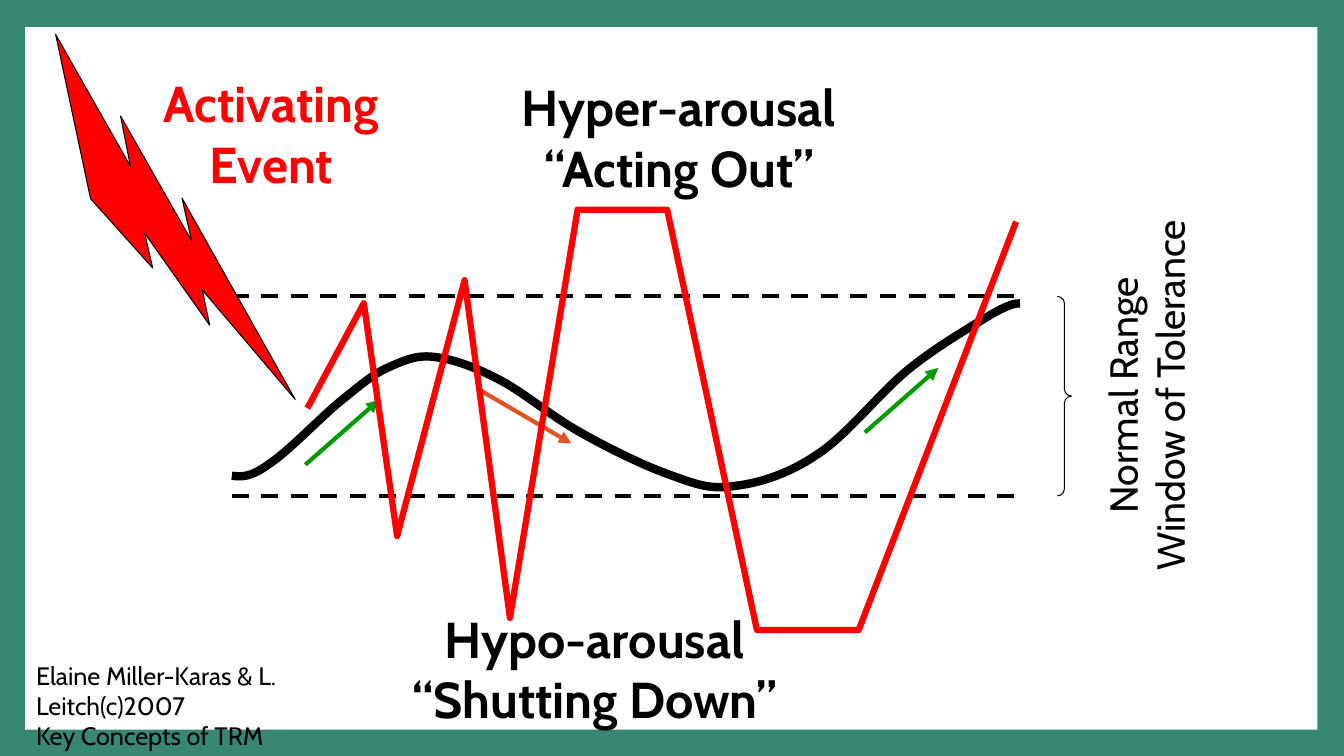
from lxml import etree
from pptx import Presentation
from pptx.dml.color import RGBColor
from pptx.enum.dml import MSO_LINE
from pptx.enum.shapes import MSO_CONNECTOR, MSO_SHAPE
from pptx.enum.text import MSO_AUTO_SIZE, PP_ALIGN
from pptx.oxml.ns import qn
from pptx.util import Pt

RECT = MSO_SHAPE.RECTANGLE
BOLT = MSO_SHAPE.LIGHTNING_BOLT
BRACE = MSO_SHAPE.RIGHT_BRACE
LINE = MSO_CONNECTOR.STRAIGHT
DASH = MSO_LINE.DASH
LEFT, MID = PP_ALIGN.LEFT, PP_ALIGN.CENTER
GROW, FIXED = MSO_AUTO_SIZE.SHAPE_TO_FIT_TEXT, MSO_AUTO_SIZE.NONE

GREEN, WHITE, BLACK, RED = "388773", "FFFFFF", "000000", "FF0000"
RISE, FALL = "009900", "DF5327"

WAVE = [
    (165.6, 339.8),
    (172.1, 340.6), (178.6, 341.3), (191.5, 331.9),
    (205.2, 323.3), (229.7, 297.4), (244.1, 285.8),
    (258.5, 274.3), (265.7, 267.8), (276.5, 262.8),
    (288, 257.8), (296.6, 253.4), (309.6, 254.9),
    (322.6, 256.3), (337.7, 261.4), (355.7, 270.7),
    (373, 279.4), (393.8, 297.4), (414.7, 308.9),
    (434.9, 320.4), (461.5, 333.4), (480.2, 339.8),
    (498.2, 346.3), (508.3, 349.9), (525.6, 347),
    (542.9, 344.9), (563.8, 338.4), (584.6, 324),
    (605.5, 310.3), (629.3, 279.4), (650.2, 262.8),
    (671, 246.2), (696.2, 231.8), (709.2, 223.9),
    (722.2, 216.7), (725.8, 216.7), (728.6, 216.7),
]
SPIKES = [
    (219.6, 291.6), (259.9, 216.7), (283.7, 383), (331.9, 200.2),
    (364.3, 441.4), (412.6, 149.8), (476.6, 149.8), (540.7, 450),
    (613.4, 450), (725.8, 158.4),
]
ARROWS = [
    (218.2, 331.9, 270.7, 285.8, RISE),
    (342.7, 278.6, 408.2, 316.8, FALL),
    (617.8, 308.9, 670.3, 262.8, RISE),
]
TOP, BASE = 211.7, 354.2


def hue(code):
    """Turn a hex string into a colour."""
    return RGBColor.from_string(code)


class Deck:
    """Hold the style and the current slide."""

    def __init__(self, font, back):
        """Open a blank slide on a plain background."""
        self.font = font
        self.file = Presentation()
        self.file.slide_width, self.file.slide_height = Pt(960), Pt(540)
        self.slide = self.file.slides.add_slide(self.file.slide_layouts[6])
        fill = self.slide.background.fill
        fill.solid()
        fill.fore_color.rgb = hue(back)

    def paint(self, item, fill=None, edge=None, width=0.75):
        """Set fill and outline, and drop the shadow."""
        item.shadow.inherit = False
        if fill:
            item.fill.solid()
            item.fill.fore_color.rgb = hue(fill)
        else:
            item.fill.background()
        if edge:
            item.line.color.rgb = hue(edge)
            item.line.width = Pt(width)
        else:
            item.line.fill.background()

    def shape(self, kind, box, fill=None, edge=None, turn=0, flip=False):
        """Add a preset shape."""
        item = self.slide.shapes.add_shape(kind, *map(Pt, box))
        self.paint(item, fill, edge)
        item.rotation = turn
        if flip:
            item.element.spPr.find(qn("a:xfrm")).set("flipH", "1")
        return item

    def trace(self, points, color, width, curved=False):
        """Add an open outline, straight or made of cubic curves."""
        spots = [(Pt(x), Pt(y)) for x, y in points]
        form = self.slide.shapes.build_freeform(*spots[0])
        form.add_line_segments(spots[1:], close=False)
        item = form.convert_to_shape()
        self.paint(item, None, color, width)
        if curved:
            route = next(item.element.iter(qn("a:path")))
            steps = route.findall(qn("a:lnTo"))
            for i in range(0, len(steps), 3):
                bend = etree.SubElement(route, qn("a:cubicBezTo"))
                for step in steps[i:i + 3]:
                    bend.append(step[0])
                    route.remove(step)

    def line(self, x1, y1, x2, y2, color, dash=None, arrow=False):
        """Add a straight line, dashed or with an arrowhead."""
        item = self.slide.shapes.add_connector(LINE, *map(Pt, (x1, y1, x2, y2)))
        item.line.color.rgb = hue(color)
        item.line.width = Pt(3)
        if dash:
            item.line.dash_style = dash
        props = item.element.spPr
        if arrow:
            stroke = props.find(qn("a:ln"))
            etree.SubElement(stroke, qn("a:tailEnd"), type="triangle")
        etree.SubElement(props, qn("a:effectLst"))

    def text(self, box, lines, size, color=BLACK, bold=False, align=MID,
             turn=0, fit=GROW):
        """Add a text box with one paragraph for each line."""
        item = self.slide.shapes.add_textbox(*map(Pt, box))
        item.rotation = turn
        frame = item.text_frame
        frame.word_wrap = True
        frame.auto_size = fit
        for i, words in enumerate(lines):
            para = frame.add_paragraph() if i else frame.paragraphs[0]
            para.alignment = align
            run = para.add_run()
            run.text = words
            run.font.name = self.font
            run.font.size = Pt(size)
            run.font.bold = bold
            run.font.color.rgb = hue(color)


def main():
    """Draw the arousal chart and save it."""
    deck = Deck("Cabin", GREEN)
    deck.shape(RECT, (18, 19.4, 923, 501.8), WHITE)
    deck.trace(WAVE, BLACK, 6, curved=True)
    for x1, y1, x2, y2, color in ARROWS:
        deck.line(x1, y1, x2, y2, color, arrow=True)
    for y in (TOP, BASE):
        deck.line(165.6, y, 733, y, BLACK, dash=DASH)
    deck.shape(BOLT, (-33.8, 113, 303.1, 89.3), RED, BLACK, 250.3, True)
    deck.trace(SPIKES, RED, 4.5)
    deck.text((101.5, 48.2, 184.3, 94.3), ["Activating", "Event"],
              36, RED, True)
    deck.text((312.5, 51.1, 344.9, 94.3), ["Hyper-arousal", "“Acting Out”"],
              36, bold=True)
    deck.text((263.5, 430.6, 322.6, 94.3), ["Hypo-arousal", "“Shutting Down”"],
              36, bold=True)
    deck.text((655.9, 244.8, 325.4, 74.9),
              ["Normal Range", "Window of Tolerance"], 28, turn=270)
    brace = deck.shape(BRACE, (755.3, TOP, 10.1, BASE - TOP), edge=BLACK)
    brace.adjustments[0] = 0.5
    deck.text((18.7, 468, 252, 59.8),
              ["Elaine Miller-Karas & L. Leitch(c)2007", "Key Concepts of TRM"],
              18, align=LEFT, fit=FIXED)
    deck.file.save("out.pptx")


if __name__ == "__main__":
    main()
